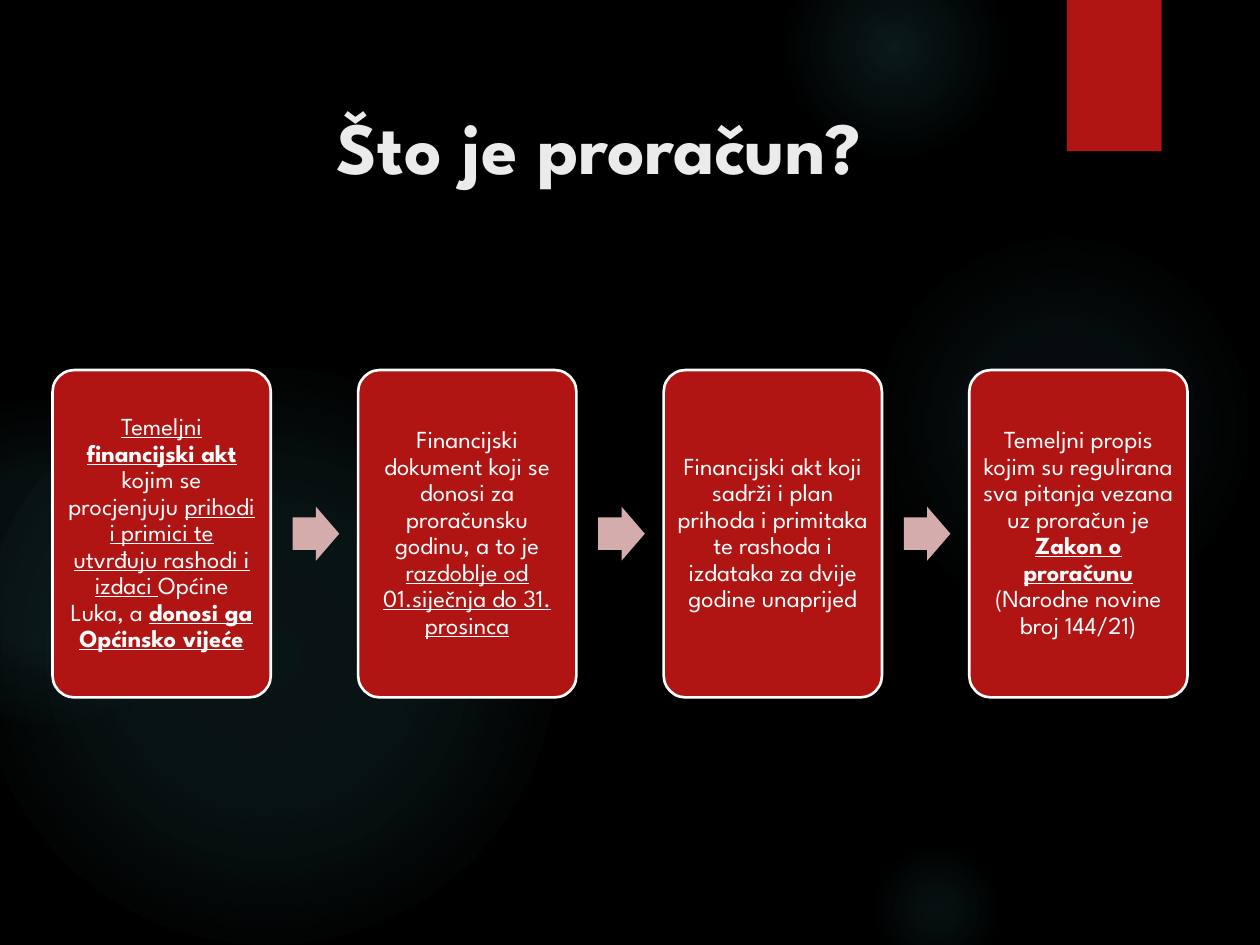
from lxml.etree import SubElement
from pptx import Presentation
from pptx.dml.color import RGBColor
from pptx.enum.shapes import MSO_SHAPE
from pptx.enum.text import MSO_ANCHOR, MSO_AUTO_SIZE, PP_ALIGN
from pptx.oxml import parse_xml
from pptx.oxml.ns import nsdecls, qn
from pptx.util import Cm, Pt

COLORS = {
    "background": "000000",
    "glow": "50B9C1",
    "red": "B01513",
    "arrow": "D4ACAB",
    "title": "EBEBEB",
    "white": "FFFFFF",
    "shadow": "000000",
}
FONT = "League Spartan"

# left, top, diameter in cm, then (position %, opacity %) stops
GLOWS = [
    (17.5, 4.65, 7.82, [(0, 7), (36, 6), (69, 0)]),
    (15.8, -1.27, 4.45, [(0, 14), (36, 7), (73, 0)]),
    (17.5, 16.94, 2.74, [(0, 9), (36, 5), (66, 0)]),
    (-0.43, 7.42, 11.63, [(0, 11), (36, 10), (75, 0)]),
    (-2.34, 8.05, 6.55, [(0, 8), (36, 8), (72, 0)]),
]

PLAIN = {}
UNDERLINED = {"underline": True}
STRONG = {"bold": True, "underline": True}
CARDS = [
    [
        ("Temeljni ", UNDERLINED),
        ("financijski akt ", STRONG),
        ("kojim se procjenjuju ", PLAIN),
        ("prihodi i primici te utvrđuju rashodi i izdaci ", UNDERLINED),
        ("Općine Luka, a ", PLAIN),
        ("donosi ga Općinsko vijeće", STRONG),
    ],
    [
        ("Financijski dokument koji se donosi za proračunsku godinu, a to je ", PLAIN),
        ("razdoblje od 01.siječnja do 31. prosinca", UNDERLINED),
    ],
    [
        ("Financijski akt koji sadrži i plan prihoda i primitaka te rashoda i "
         "izdataka za dvije godine unaprijed", PLAIN),
    ],
    [
        ("Temeljni propis kojim su regulirana sva pitanja vezana uz proračun je ", PLAIN),
        ("Zakon o proračunu ", STRONG),
        ("(Narodne novine broj 144/21)", PLAIN),
    ],
]
CARD_LEFT, CARD_TOP, CARD_WIDTH, CARD_HEIGHT, CARD_PITCH = 1.06, 7.46, 4.4, 6.6, 6.16
ARROW_WIDTH, ARROW_HEIGHT, ARROW_OFFSET = 0.94, 1.09, 4.84


def rgb(name):
    return RGBColor.from_string(COLORS[name])


def add_span(para, text, size=14, color="white", bold=False, underline=False):
    span = para.add_run()
    span.text = text
    font = span.font
    font.name, font.size = FONT, Pt(size)
    font.bold, font.underline = bold, underline
    font.color.rgb = rgb(color)


class SlideBuilder:
    """Holds the current page and draws each kind of element on it."""

    def __init__(self, page):
        self.page = page
        fill = page.background.fill
        fill.solid()
        fill.fore_color.rgb = rgb("background")

    def shape(self, kind, left, top, width, height, fill=None, line=None):
        shape = self.page.shapes.add_shape(kind, Cm(left), Cm(top), Cm(width), Cm(height))
        shape.shadow.inherit = False
        if fill:
            shape.fill.solid()
            shape.fill.fore_color.rgb = rgb(fill)
        if line:
            shape.line.color.rgb = rgb(line)
            shape.line.width = Pt(1.5)
        else:
            shape.line.fill.background()
        return shape

    def glow(self, left, top, diameter, stops):
        """Draw a circle whose colour fades out from its centre."""
        circle = self.shape(MSO_SHAPE.OVAL, left, top, diameter, diameter)
        stop_xml = "".join(
            f'<a:gs pos="{position * 1000}"><a:srgbClr val="{COLORS["glow"]}">'
            f'<a:alpha val="{opacity * 1000}"/></a:srgbClr></a:gs>'
            for position, opacity in stops
        )
        gradient = parse_xml(
            f'<a:gradFill {nsdecls("a")} rotWithShape="1"><a:gsLst>{stop_xml}</a:gsLst>'
            '<a:path path="circle"><a:fillToRect l="50000" t="50000" r="50000" b="50000"/>'
            "</a:path></a:gradFill>"
        )
        circle.element.spPr.find(qn("a:prstGeom")).addnext(gradient)

    def ribbon(self, left, top, width, height):
        ribbon = self.shape(MSO_SHAPE.RECTANGLE, left, top, width, height, fill="red")
        effects = ribbon.element.spPr.find(qn("a:effectLst"))
        shadow = SubElement(effects, qn("a:outerShdw"), blurRad=str(Pt(3)),
                            dist=str(Pt(2)), dir="5400000", rotWithShape="0")
        color = SubElement(shadow, qn("a:srgbClr"), val=COLORS["shadow"])
        SubElement(color, qn("a:alpha"), val="45000")

    def title(self, text, left, top, width, height):
        title = self.page.shapes.title
        title.left, title.top, title.width, title.height = map(Cm, (left, top, width, height))
        frame = title.text_frame
        frame.auto_size = MSO_AUTO_SIZE.NONE
        frame.vertical_anchor = MSO_ANCHOR.TOP
        frame.margin_top = Cm(0.2)
        para = frame.paragraphs[0]
        para.alignment = PP_ALIGN.CENTER
        add_span(para, text, size=42, color="title", bold=True)
        self.page.shapes.element.append(title.element)  # in front of the glows

    def card(self, left, spans):
        card = self.shape(MSO_SHAPE.ROUNDED_RECTANGLE, left, CARD_TOP, CARD_WIDTH,
                          CARD_HEIGHT, fill="red", line="white")
        card.adjustments[0] = 0.1
        frame = card.text_frame
        frame.word_wrap = True
        frame.vertical_anchor = MSO_ANCHOR.MIDDLE
        frame.margin_left = frame.margin_right = Cm(0.15)
        frame.margin_top = frame.margin_bottom = Cm(0.15)
        para = frame.paragraphs[0]
        para.alignment = PP_ALIGN.CENTER
        para.line_spacing = 0.9
        for text, style in spans:
            add_span(para, text, **style)

    def arrow(self, left):
        top = CARD_TOP + (CARD_HEIGHT - ARROW_HEIGHT) / 2
        arrow = self.shape(MSO_SHAPE.RIGHT_ARROW, left, top, ARROW_WIDTH, ARROW_HEIGHT,
                           fill="arrow")
        arrow.adjustments[0], arrow.adjustments[1] = 0.6, 0.5


def main():
    deck = Presentation()
    deck.slide_width, deck.slide_height = Cm(25.4), Cm(19.05)
    builder = SlideBuilder(deck.slides.add_slide(deck.slide_layouts[5]))

    for glow in GLOWS:
        builder.glow(*glow)
    builder.ribbon(21.51, 0, 1.91, 3.05)
    builder.title("Što je proračun?", 2.97, 1.83, 18.21, 4.24)

    for index, spans in enumerate(CARDS):
        left = CARD_LEFT + index * CARD_PITCH
        builder.card(left, spans)
        if index < len(CARDS) - 1:
            builder.arrow(left + ARROW_OFFSET)

    deck.save("out.pptx")


if __name__ == "__main__":
    main()
